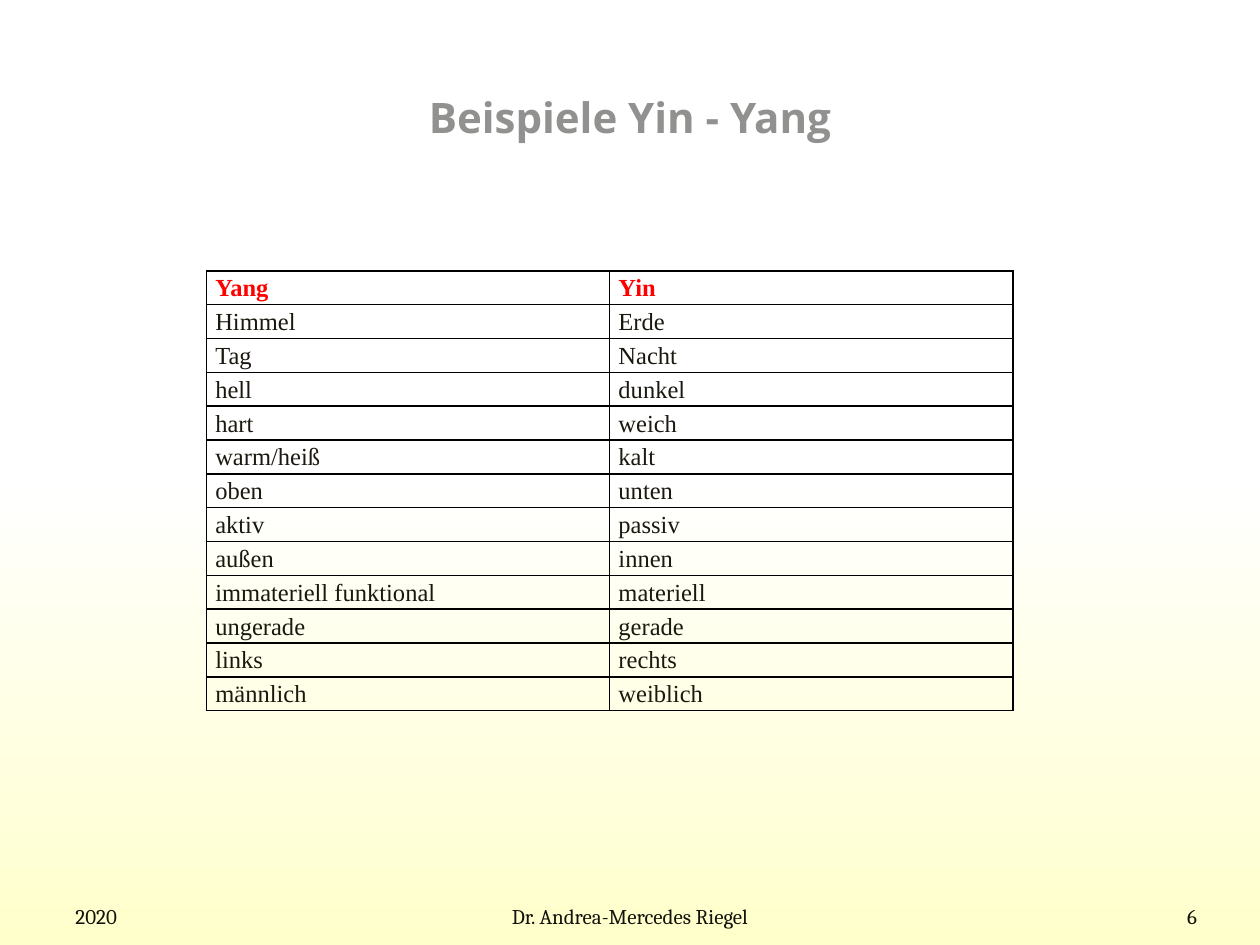
from lxml.etree import SubElement
from pptx import Presentation
from pptx.dml.color import RGBColor
from pptx.enum.text import MSO_ANCHOR as Anchor, PP_ALIGN as Align
from pptx.oxml.ns import qn
from pptx.util import Pt

TITLE = "Beispiele Yin - Yang"
PAIRS = [
    ("Yang", "Yin"),
    ("Himmel", "Erde"),
    ("Tag", "Nacht"),
    ("hell", "dunkel"),
    ("hart", "weich"),
    ("warm/heiß", "kalt"),
    ("oben", "unten"),
    ("aktiv", "passiv"),
    ("außen", "innen"),
    ("immateriell funktional", "materiell"),
    ("ungerade", "gerade"),
    ("links", "rechts"),
    ("männlich", "weiblich"),
]
# text, left, width, alignment, side inset
FOOTERS = [
    ("2020", 36, 168, Align.LEFT, 7.2),
    ("Dr. Andrea-Mercedes Riegel", 246, 228, Align.CENTER, 7.2),
    ("6", 624, 60, Align.RIGHT, 0),
]
THEME = {
    "title": {"name": "Open Sans", "size": Pt(24), "bold": True, "color": "919190"},
    "footer": {"name": "Cambria", "size": Pt(12), "bold": False, "color": "13120B"},
    "header": {"name": "Times New Roman", "size": Pt(14), "bold": True, "color": "FF0000"},
    "body": {"name": "Times New Roman", "size": Pt(14), "bold": False, "color": "1A180F"},
    "background": [(0.5, "FFFFFF"), (1, "FFFFCC")],
    "border": "000000",
}
TABLE_LEFT, TABLE_TOP, COLUMN_WIDTH, ROW_HEIGHT = 118, 154.8, 230.4, 19.33


def write(frame, text, style, align):
    para = frame.paragraphs[0]
    para.alignment = align
    span = para.add_run()
    span.text = text
    for key, value in THEME[style].items():
        if key == "color":
            span.font.color.rgb = RGBColor.from_string(value)
        else:
            setattr(span.font, key, value)
    return para


def add_text(page, place, text, style, align, anchor, inset=7.2):
    frame = page.shapes.add_textbox(*map(Pt, place)).text_frame
    layout = {"word_wrap": True, "vertical_anchor": anchor,
              "margin_left": Pt(inset), "margin_right": Pt(inset)}
    for key, value in layout.items():
        setattr(frame, key, value)
    write(frame, text, style, align)


def add_borders(cell):
    properties = cell._tc.get_or_add_tcPr()
    for side in ("L", "R", "T", "B"):
        line = SubElement(properties, qn(f"a:ln{side}"), w=str(Pt(1)))
        fill = SubElement(line, qn("a:solidFill"))
        SubElement(fill, qn("a:srgbClr"), val=THEME["border"])


def add_pairs_table(page):
    rows, columns = len(PAIRS), len(PAIRS[0])
    place = (TABLE_LEFT, TABLE_TOP, columns * COLUMN_WIDTH, rows * ROW_HEIGHT)
    table = page.shapes.add_table(rows, columns, *map(Pt, place)).table
    table.horz_banding = False
    for column in table.columns:
        column.width = Pt(COLUMN_WIDTH)
    margins = {"margin_left": Pt(5.04), "margin_right": Pt(5.04),
               "margin_top": 0, "margin_bottom": 0}
    for index, pair in enumerate(PAIRS):
        table.rows[index].height = Pt(ROW_HEIGHT)
        for cell, word in zip(table.rows[index].cells, pair):
            for key, value in margins.items():
                setattr(cell, key, value)
            style = "body" if index else "header"
            write(cell.text_frame, word, style, Align.JUSTIFY).line_spacing = 1.15
            add_borders(cell)
            cell.fill.background()


def paint_background(page):
    fill = page.background.fill
    fill.gradient()
    fill.gradient_angle = 270
    for stop, (position, color) in zip(fill.gradient_stops, THEME["background"]):
        stop.position = position
        stop.color.rgb = RGBColor.from_string(color)


def main():
    deck = Presentation()
    deck.slide_width, deck.slide_height = Pt(720), Pt(540)
    page = deck.slides.add_slide(deck.slide_layouts[6])
    paint_background(page)
    add_text(page, (36, 21.6, 648, 90), TITLE, "title", Align.CENTER, Anchor.MIDDLE)
    for text, left, width, align, inset in FOOTERS:
        add_text(page, (left, 505.44, width, 28.8), text, "footer", align,
                 Anchor.BOTTOM, inset)
    add_pairs_table(page)
    deck.save("out.pptx")


if __name__ == "__main__":
    main()
